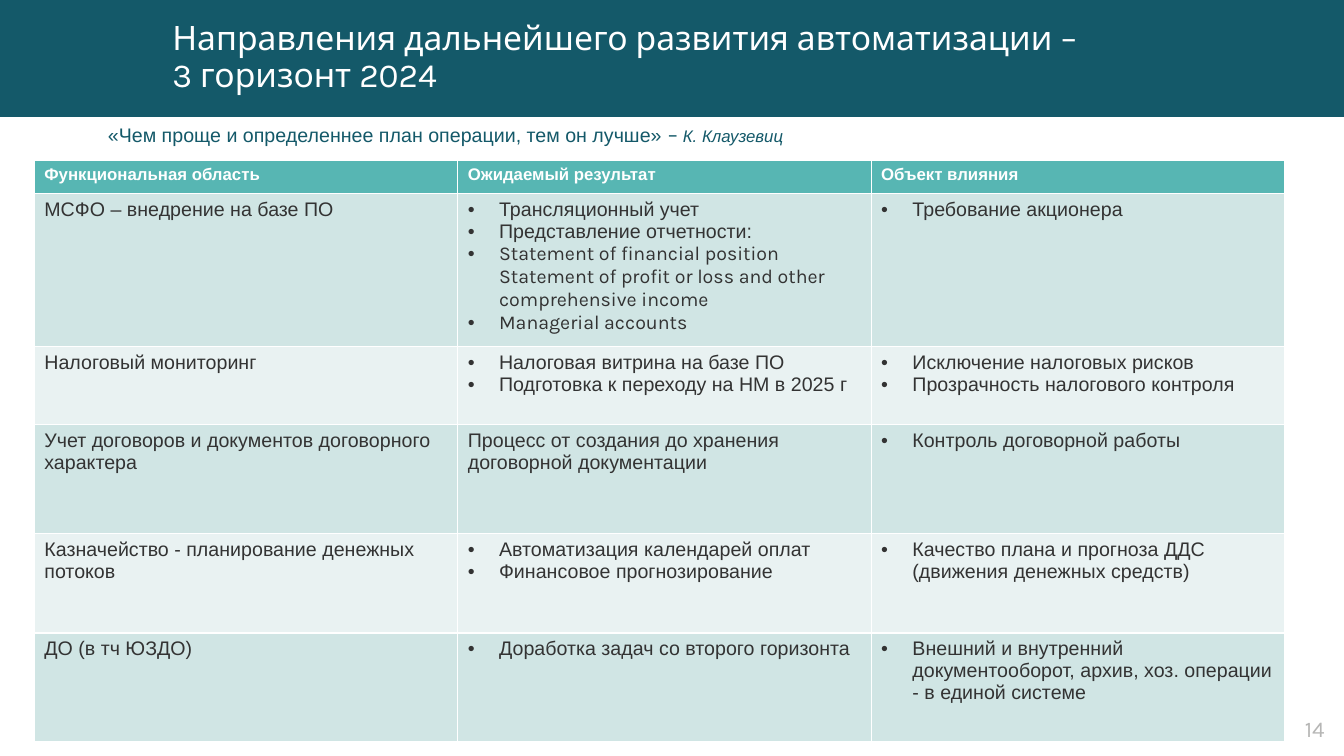
from dataclasses import dataclass

from lxml import etree
from pptx import Presentation
from pptx import util as u
from pptx.dml.color import RGBColor
from pptx.enum import shapes, text
from pptx.oxml import ns

DARK, TEAL, INK, WHITE = "145969", "57B6B3", "333333", "FFFFFF"
BANDS = ("D0E5E4", "E9F2F2")
LEFT, CENTER = text.PP_ALIGN.LEFT, text.PP_ALIGN.CENTER


@dataclass
class Line:
    words: str
    dot: bool = True
    face: str = "Arial"


@dataclass
class Row:
    area: str
    goals: list[Line]
    scope: list[Line]
    high: float


@dataclass
class Part:
    words: str
    size: float
    face: str = "Arial"
    slant: bool = False


HEADS = ("Функциональная область", "Ожидаемый результат", "Объект влияния")
WIDTHS = (4.2, 4.1, 4.1)
ROWS = [
    Row("МСФО – внедрение на базе ПО",
        [Line("Трансляционный учет"),
         Line("Представление отчетности:"),
         Line("Statement of financial position Statement of profit or loss "
              "and other comprehensive income", face="Karla"),
         Line("Managerial accounts", face="Karla")],
        [Line("Требование акционера")], 1.52),
    Row("Налоговый мониторинг",
        [Line("Налоговая витрина на базе ПО"),
         Line("Подготовка к переходу на НМ в 2025 г")],
        [Line("Исключение налоговых рисков"),
         Line("Прозрачность налогового контроля")], 0.77),
    Row("Учет договоров и документов договорного характера",
        [Line("Процесс от создания до хранения договорной документации", dot=False)],
        [Line("Контроль договорной работы")], 1.08),
    Row("Казначейство - планирование денежных потоков",
        [Line("Автоматизация календарей оплат"),
         Line("Финансовое прогнозирование")],
        [Line("Качество плана и прогноза ДДС (движения денежных средств)")], 0.99),
    Row("ДО (в тч ЮЗДО)",
        [Line("Доработка задач со второго горизонта")],
        [Line("Внешний и внутренний документооборот, архив, хоз. операции "
              "- в единой системе")], 1.08),
]
QUOTE = [
    Part("«Чем проще и определеннее план операции, тем он лучше» ", 14),
    Part("– ", 15, "Karla"),
    Part("К. Клаузевиц", 12, slant=True),
]


def paint(color, code: str) -> None:
    color.rgb = RGBColor.from_string(code)


def style(font, size: float, code: str, face: str, bold: bool = False) -> None:
    font.size, font.name, font.bold = u.Pt(size), face, bold
    paint(font.color, code)


def fill(item, code: str) -> None:
    item.fill.solid()
    paint(item.fill.fore_color, code)


def place(shape, left: float, top: float, width: float, height: float) -> None:
    shape.left, shape.top = u.Inches(left), u.Inches(top)
    shape.width, shape.height = u.Inches(width), u.Inches(height)


def frame(shape):
    body = shape.text_frame
    body.word_wrap = True
    body.auto_size = text.MSO_AUTO_SIZE.NONE
    body.vertical_anchor = text.MSO_ANCHOR.MIDDLE
    return body


def bullet(para, char: str = "") -> None:
    props = para._p.get_or_add_pPr()
    hang = u.Inches(0.31) if char else 0
    props.set("marL", str(hang))
    props.set("indent", str(-hang))
    if char:
        etree.SubElement(props, ns.qn("a:buFont")).set("typeface", "Arial")
        etree.SubElement(props, ns.qn("a:buChar")).set("char", char)
    else:
        etree.SubElement(props, ns.qn("a:buNone"))


def write(cell, lines: list[Line], code: str) -> None:
    fill(cell, code)
    body = cell.text_frame
    for spot, line in enumerate(lines):
        para = body.add_paragraph() if spot else body.paragraphs[0]
        para.text = line.words
        if line.dot:
            bullet(para, "•")
        style(para.font, 14, INK, line.face)


def draw_bar(slide) -> None:
    bar = slide.shapes.add_shape(shapes.MSO_SHAPE.RECTANGLE, 0, 0,
                                 u.Inches(13.33), u.Inches(1.16))
    bar.shadow.inherit = False
    fill(bar, DARK)
    bar.line.fill.background()
    slide.shapes._spTree.insert(2, bar._element)


def draw_title(slide) -> None:
    title = slide.shapes.title
    place(title, 1.61, 0.04, 10.37, 1.07)
    para = frame(title).paragraphs[0]
    para.add_run().text = "Направления дальнейшего развития автоматизации –"
    para.add_line_break()
    para.add_run().text = "3 горизонт 2024"
    para.alignment, para.line_spacing = LEFT, 0.9
    style(para.font, 24, WHITE, "Karla")


def draw_quote(slide) -> None:
    quote = slide.placeholders[1]
    place(quote, 0.97, 1.15, 7.27, 0.4)
    para = frame(quote).paragraphs[0]
    bullet(para)
    para.alignment, para.line_spacing = LEFT, 0.9
    para.space_before = u.Pt(0)
    for part in QUOTE:
        run = para.add_run()
        run.text = part.words
        style(run.font, part.size, DARK, part.face)
        run.font.italic = part.slant


def draw_table(slide) -> None:
    highs = [0.33] + [row.high for row in ROWS]
    table = slide.shapes.add_table(
        len(highs), len(WIDTHS), u.Inches(0.34), u.Inches(1.59),
        u.Inches(sum(WIDTHS)), u.Inches(sum(highs))).table
    for col, width in zip(table.columns, WIDTHS):
        col.width = u.Inches(width)
    for row, high in zip(table.rows, highs):
        row.height = u.Inches(high)
    for cell, head in zip(table.rows[0].cells, HEADS):
        fill(cell, TEAL)
        para = cell.text_frame.paragraphs[0]
        para.text = head
        style(para.font, 12, WHITE, "Arial", True)
    for spot, row in enumerate(ROWS):
        parts = ([Line(row.area, dot=False)], row.goals, row.scope)
        for cell, lines in zip(table.rows[spot + 1].cells, parts):
            write(cell, lines, BANDS[spot % 2])


def draw_number(slide) -> None:
    box = slide.shapes.add_textbox(u.Inches(12.75), u.Inches(6.96),
                                   u.Inches(0.58), u.Inches(0.54))
    para = frame(box).paragraphs[0]
    para.text = "14"
    para.alignment = CENTER
    style(para.font, 16, "B6B6B5", "Karla")


def main() -> None:
    deck = Presentation()
    deck.slide_width, deck.slide_height = u.Inches(13.33), u.Inches(7.5)
    slide = deck.slides.add_slide(deck.slide_layouts[1])
    for draw in (draw_bar, draw_title, draw_quote, draw_table, draw_number):
        draw(slide)
    deck.save("out.pptx")


if __name__ == "__main__":
    main()
